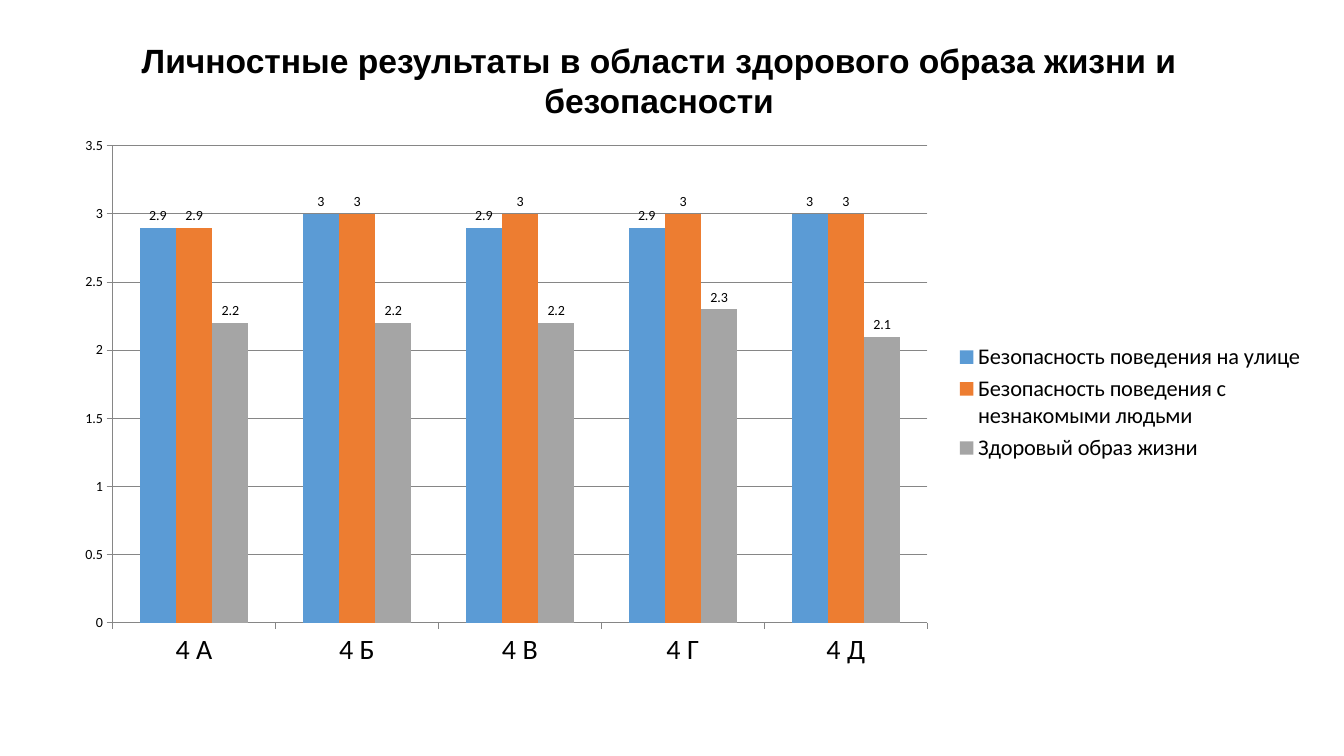
from pptx import Presentation
from pptx.chart.data import CategoryChartData
from pptx.dml.color import RGBColor
from pptx.enum.chart import XL_CHART_TYPE as ChartType
from pptx.enum.chart import XL_LABEL_POSITION as LabelPosition
from pptx.enum.chart import XL_LEGEND_POSITION as LegendPosition
from pptx.enum.chart import XL_TICK_MARK as TickMark
from pptx.enum.text import MSO_ANCHOR as Anchor
from pptx.enum.text import MSO_AUTO_SIZE as AutoSize
from pptx.enum.text import PP_ALIGN as Align
from pptx.util import Cm, Pt

BLACK = RGBColor(0x00, 0x00, 0x00)
BLUE = RGBColor(0x5B, 0x9B, 0xD5)
ORANGE = RGBColor(0xED, 0x7D, 0x31)
GREY = RGBColor(0xA5, 0xA5, 0xA5)
AXIS_GREY = RGBColor(0x86, 0x86, 0x86)

TITLE = "Личностные результаты в области здорового образа жизни и безопасности"
CLASSES = ["4 А", "4 Б", "4 В", "4 Г", "4 Д"]
RESULTS = [
    ("Безопасность поведения на улице", (2.9, 3, 2.9, 2.9, 3), BLUE),
    ("Безопасность поведения с незнакомыми людьми", (2.9, 3, 3, 3, 3), ORANGE),
    ("Здоровый образ жизни", (2.2, 2.2, 2.2, 2.3, 2.1), GREY),
]


def set_font(font, name, size):
    """Give a font its face, its size in points and black colour."""
    font.name = name
    font.size = Pt(size)
    font.color.rgb = BLACK


def place_title(page, left, top, width, height):
    """Move the title placeholder into the box and format it."""
    title = page.shapes.title
    title.left, title.top, title.width, title.height = left, top, width, height
    frame = title.text_frame
    frame.text = TITLE
    frame.word_wrap = True
    frame.auto_size = AutoSize.SHAPE_TO_FIT_TEXT
    frame.vertical_anchor = Anchor.MIDDLE
    para = frame.paragraphs[0]
    para.alignment = Align.CENTER
    span = para.runs[0]
    set_font(span.font, "Arial", 24)
    span.font.bold = True


def style_axes(chart):
    """Format both axes and the value gridlines."""
    for axis, size in ((chart.category_axis, 20), (chart.value_axis, 10)):
        axis.major_tick_mark = TickMark.OUTSIDE
        axis.minor_tick_mark = TickMark.NONE
        axis.format.line.color.rgb = AXIS_GREY
        axis.format.line.width = Pt(0.75)
        set_font(axis.tick_labels.font, "Calibri", size)
    values = chart.value_axis
    values.minimum_scale, values.maximum_scale, values.major_unit = 0, 3.5, 0.5
    values.has_major_gridlines = True
    gridline = values.major_gridlines.format.line
    gridline.color.rgb = AXIS_GREY
    gridline.width = Pt(0.75)


def style_series(plot):
    """Colour each series and show its values above the columns."""
    plot.gap_width = 150
    plot.overlap = 0
    plot.vary_by_categories = False
    for series, (_, _, color) in zip(plot.series, RESULTS):
        series.format.fill.solid()
        series.format.fill.fore_color.rgb = color
        labels = series.data_labels
        labels.show_value = True
        labels.position = LabelPosition.OUTSIDE_END
        set_font(labels.font, "Calibri", 10)


def place_chart(page, left, top, width, height):
    """Add the clustered column chart of results in the box."""
    data = CategoryChartData()
    data.categories = CLASSES
    for name, values, _ in RESULTS:
        data.add_series(name, values)
    chart = page.shapes.add_chart(
        ChartType.COLUMN_CLUSTERED, left, top, width, height, data
    ).chart
    chart.has_title = False
    set_font(chart.font, "Calibri", 10)
    style_axes(chart)
    style_series(chart.plots[0])
    chart.has_legend = True
    chart.legend.position = LegendPosition.RIGHT
    chart.legend.include_in_layout = False
    set_font(chart.legend.font, "Calibri", 16)


def build_results_page(deck):
    """Add the title-only page with the results chart."""
    page = deck.slides.add_slide(deck.slide_layouts[5])
    place_title(page, Cm(0.38), Cm(0.84), Cm(32.46), Cm(2.36))
    place_chart(page, Cm(1.52), Cm(3.2), Cm(31.65), Cm(13.89))


def main():
    """Build and save the deck."""
    deck = Presentation()
    deck.slide_width = Cm(33.87)
    deck.slide_height = Cm(19.05)
    build_results_page(deck)
    deck.save("out.pptx")


if __name__ == "__main__":
    main()
